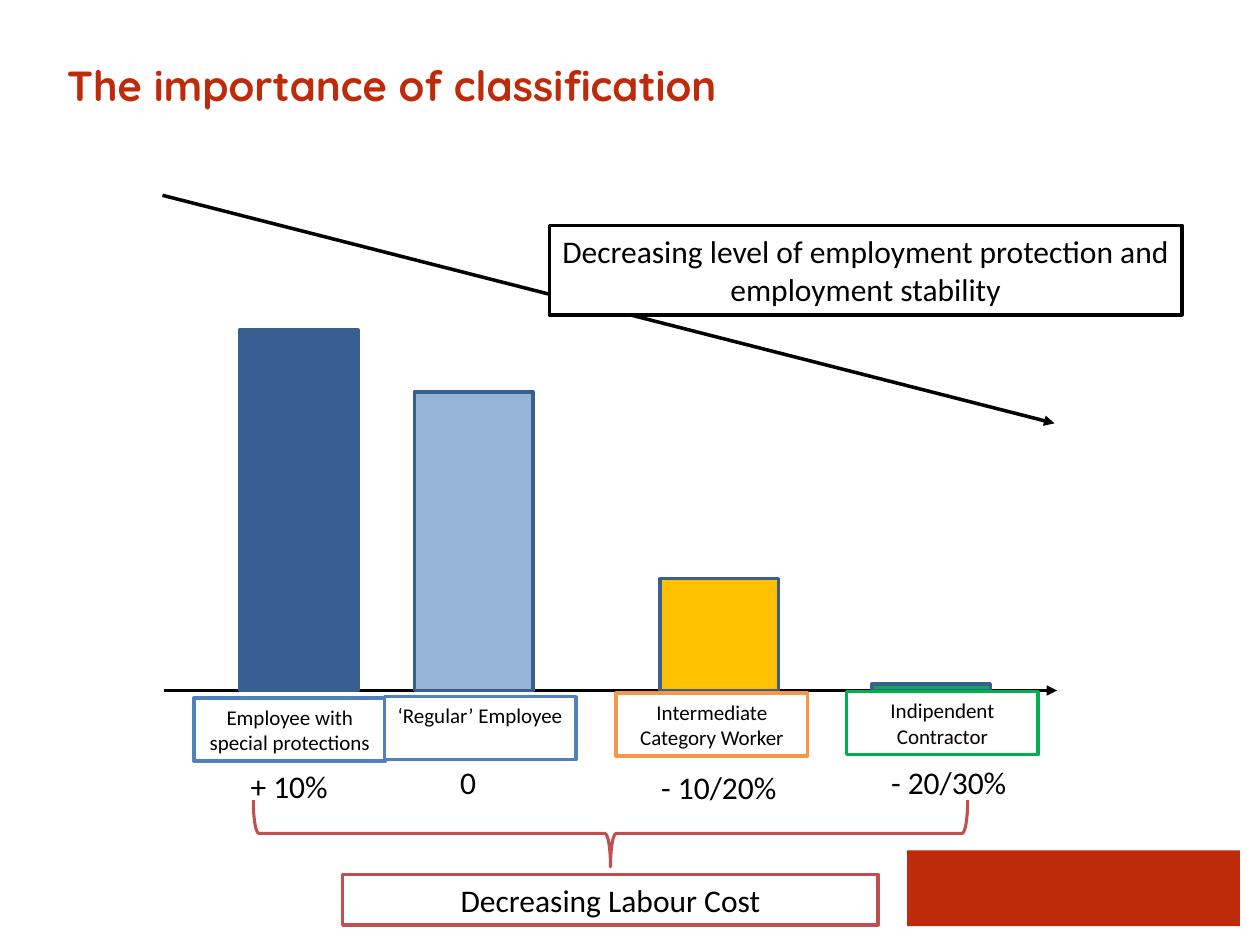
from pptx import Presentation
from pptx.dml.color import RGBColor
from pptx.enum.shapes import MSO_CONNECTOR, MSO_SHAPE
from pptx.enum.text import MSO_ANCHOR, PP_ALIGN
from pptx.oxml.ns import qn
from pptx.util import Inches, Pt
from lxml import etree

RECTANGLE, BRACE = MSO_SHAPE.RECTANGLE, MSO_SHAPE.RIGHT_BRACE
STRAIGHT = MSO_CONNECTOR.STRAIGHT
TOP = MSO_ANCHOR.TOP
LEFT, CENTER = PP_ALIGN.LEFT, PP_ALIGN.CENTER

COLUMNS, ROWS = 100, 75
BASELINE = 54.8
BAR_WIDTH, LABEL_WIDTH, LABEL_HEIGHT = 9.4, 15.2, 5
RED, BLACK, WHITE, BRICK = "BD2B0B", "000000", "FFFFFF", "C0504D"
BAR_LINE, LABEL_BLUE = "3A5F8C", "4F81BD"

CATEGORIES = [
    (19, 26.2, "376092", (15.4, 55.4), LABEL_BLUE,
     "Employee with\nspecial protections", (18.6, 60.4, 8.7), "+ 10%"),
    (32.9, 31.1, "95B3D7", (30.5, 55.3), LABEL_BLUE,
     "‘Regular’ Employee", (33.2, 60.1, 7.9), "0"),
    (52.4, 45.9, "FFC000", (48.9, 55), "F79646",
     "Intermediate Category Worker", (51.2, 60.5, 11.7), "- 10/20%"),
    (69.2, 54.3, "00B050", (67.2, 54.9), "00B050",
     "Indipendent Contractor", (69, 60.1, 12.6), "- 20/30%"),
]


def rgb(value):
    """Turn a hex string into a colour."""
    return RGBColor.from_string(value)


class Slide:
    """Holds the style and the current page, placed on a grid."""

    def __init__(self, deck):
        """Add a title-only page to the deck."""
        self.font, self.title_font = "Calibri", "Quicksand"
        self.column = deck.slide_width / COLUMNS
        self.row = deck.slide_height / ROWS
        self.page = deck.slides.add_slide(deck.slide_layouts[5])

    def place(self, left, top, width, height):
        """Convert grid units to lengths."""
        return (round(left * self.column), round(top * self.row),
                round(width * self.column), round(height * self.row))

    def letter(self, shape, text, size, font, color, align=CENTER, bold=False):
        """Put formatted text into a shape."""
        frame = shape.text_frame
        frame.text = text
        frame.word_wrap = True
        frame.vertical_anchor = TOP
        for para in frame.paragraphs:
            para.alignment = align
            for span in para.runs:
                span.font.name, span.font.size = font, Pt(size)
                span.font.bold = bold
                span.font.color.rgb = rgb(color)

    def title(self, text, *area):
        """Fill and move the title placeholder."""
        title = self.page.shapes.title
        title.left, title.top, title.width, title.height = self.place(*area)
        self.letter(title, text, 24, self.title_font, RED, LEFT, True)
        title.text_frame.paragraphs[0].line_spacing = Pt(22)

    def box(self, area, fill=None, line=None, text="", size=18, kind=RECTANGLE, weight=2):
        """Draw a preset shape, with text if given."""
        box = self.page.shapes.add_shape(kind, *self.place(*area))
        box.shadow.inherit = False
        if fill:
            box.fill.solid()
            box.fill.fore_color.rgb = rgb(fill)
        else:
            box.fill.background()
        if line:
            box.line.color.rgb = rgb(line)
            box.line.width = Pt(weight)
        else:
            box.line.fill.background()
        if text:
            self.letter(box, text, size, self.font, BLACK)
        return box

    def caption(self, text, *area):
        """Add a plain centred text box."""
        box = self.page.shapes.add_textbox(*self.place(*area))
        self.letter(box, text, 18, self.font, BLACK)

    def arrow(self, start, end, weight):
        """Draw a black line with an arrowhead at its end."""
        ends = self.place(*start, *end)
        arrow = self.page.shapes.add_connector(STRAIGHT, *ends)
        arrow.line.color.rgb = rgb(BLACK)
        arrow.line.width = Pt(weight)
        properties = arrow._element.spPr
        etree.SubElement(properties.find(qn("a:ln")), qn("a:tailEnd"), type="triangle")
        etree.SubElement(properties, qn("a:effectLst"))


def main():
    """Build and save the slide."""
    deck = Presentation()
    deck.slide_width, deck.slide_height = Inches(10), Inches(7.5)
    slide = Slide(deck)
    slide.title("The importance of classification", 4.3, 5.2, 92.1, 7.1)
    slide.box((72, 67.5, 26.4, 6), RED)
    slide.arrow((13, BASELINE), (83.9, BASELINE), 1.75)
    slide.arrow((12.9, 15.5), (83.7, 33.6), 2)
    slide.box((43.6, 17.9, 50.2, 7.1), WHITE, BLACK,
              "Decreasing level of employment protection and employment stability")
    slide.box((27.2, 69.4, 42.5, 4), WHITE, BRICK, "Decreasing Labour Cost")
    brace = slide.box((45.8, 37.8, 5.3, 56.7), line=BRICK, kind=BRACE, weight=1.75)
    brace.rotation = 90
    for left, top, fill, corner, edge, label, (x, y, width), cost in CATEGORIES:
        slide.box((left, top, BAR_WIDTH, BASELINE - top), fill, BAR_LINE)
        slide.box((*corner, LABEL_WIDTH, LABEL_HEIGHT), WHITE, edge, label, 12)
        slide.caption(cost, x, y, width, 4)
    deck.save("out.pptx")


if __name__ == "__main__":
    main()
